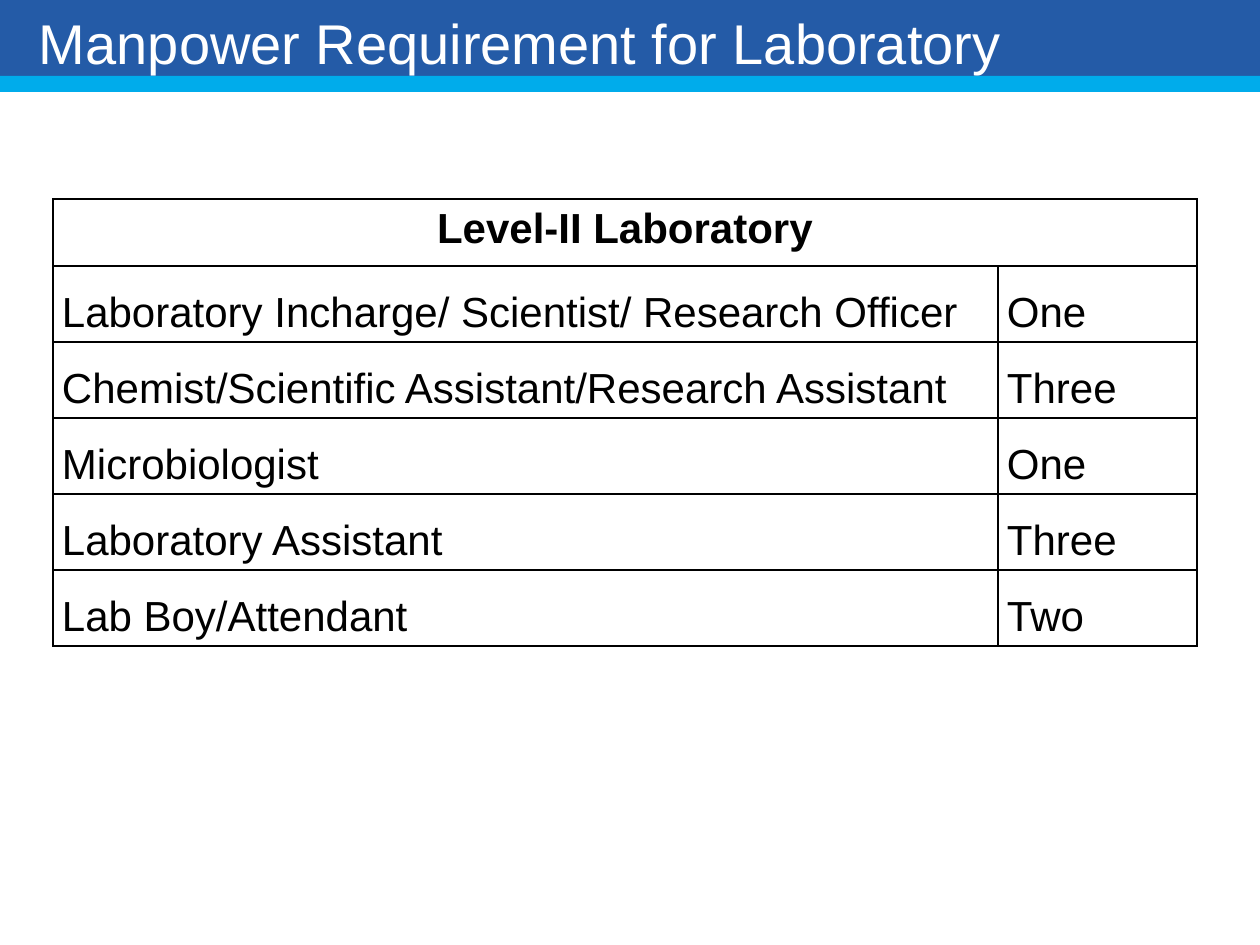
from lxml import etree
from pptx import Presentation
from pptx import util as u
from pptx.dml.color import RGBColor
from pptx.enum import shapes, text
from pptx.oxml.ns import qn

TITLE = "Manpower Requirement for Laboratory"
HEADING = "Level-II Laboratory"
STAFF = [
    ("Laboratory Incharge/ Scientist/ Research Officer", "One"),
    ("Chemist/Scientific Assistant/Research Assistant", "Three"),
    ("Microbiologist", "One"),
    ("Laboratory Assistant", "Three"),
    ("Lab Boy/Attendant", "Two"),
]

BLUE = RGBColor(0x24, 0x5B, 0xA7)
CYAN = RGBColor(0x00, 0xAC, 0xEB)
WHITE = RGBColor(0xFF, 0xFF, 0xFF)
BLACK = RGBColor(0, 0, 0)
FONT = "Arial"
SLIDE_W, SLIDE_H = 1260, 945
TABLE_X, TABLE_Y = 53, 199
COLUMNS = (945, 199)
ROWS = [67] + [76] * len(STAFF)


def px(n):
    return u.Emu(round(n * 914400 / 126))


def style(p, size, color, bold=False):
    for r in p.runs:
        r.font.name, r.font.size, r.font.bold = FONT, u.Pt(size), bold
        r.font.color.rgb = color


def add_band(s, y, h, color):
    sp = s.shapes.add_shape(shapes.MSO_SHAPE.RECTANGLE, 0, px(y), px(SLIDE_W), px(h))
    sp.shadow.inherit = False
    sp.fill.solid()
    sp.fill.fore_color.rgb = color
    sp.line.fill.background()
    return sp


def add_borders(cell):
    """Put a 1 pt line on all four sides; lines must precede the fill."""
    tc_pr = cell._tc.get_or_add_tcPr()
    for i, side in enumerate(("lnL", "lnR", "lnT", "lnB")):
        ln = etree.Element(qn(f"a:{side}"), w=str(u.Pt(1)))
        fill = etree.SubElement(ln, qn("a:solidFill"))
        etree.SubElement(fill, qn("a:srgbClr"), val=str(BLACK))
        tc_pr.insert(i, ln)


def fill_cell(cell, words, heading=False):
    cell.fill.solid()
    cell.fill.fore_color.rgb = WHITE
    add_borders(cell)
    cell.text = words
    p = cell.text_frame.paragraphs[0]
    if heading:
        p.alignment = text.PP_ALIGN.CENTER
    else:
        p.line_spacing = 1.5
        cell.margin_left = cell.margin_right = px(9)
        cell.margin_top = cell.margin_bottom = 0
    style(p, 24, BLACK, heading)


def add_title(s):
    tf = add_band(s, -5, 86, BLUE).text_frame
    tf.word_wrap = True
    tf.vertical_anchor = text.MSO_ANCHOR.TOP
    tf.margin_left, tf.margin_top = px(39), px(14)
    tf.margin_right = tf.margin_bottom = 0
    tf.text = TITLE
    p = tf.paragraphs[0]
    p.alignment = text.PP_ALIGN.LEFT
    style(p, 32, WHITE)


def add_staff_table(s):
    table = s.shapes.add_table(len(ROWS), len(COLUMNS), px(TABLE_X), px(TABLE_Y),
                               px(sum(COLUMNS)), px(sum(ROWS))).table
    table.first_row = table.horz_banding = False
    for column, w in zip(table.columns, COLUMNS):
        column.width = px(w)
    for row, h in zip(table.rows, ROWS):
        row.height = px(h)
    table.cell(0, 0).merge(table.cell(0, 1))
    fill_cell(table.cell(0, 0), HEADING, heading=True)
    add_borders(table.cell(0, 1))
    for i, row in enumerate(STAFF, 1):
        for j, words in enumerate(row):
            fill_cell(table.cell(i, j), words)


def main():
    prs = Presentation()
    prs.slide_width, prs.slide_height = px(SLIDE_W), px(SLIDE_H)
    s = prs.slides.add_slide(prs.slide_layouts[6])
    add_title(s)
    add_band(s, 76, 16, CYAN)
    add_staff_table(s)
    prs.save("out.pptx")


if __name__ == "__main__":
    main()
